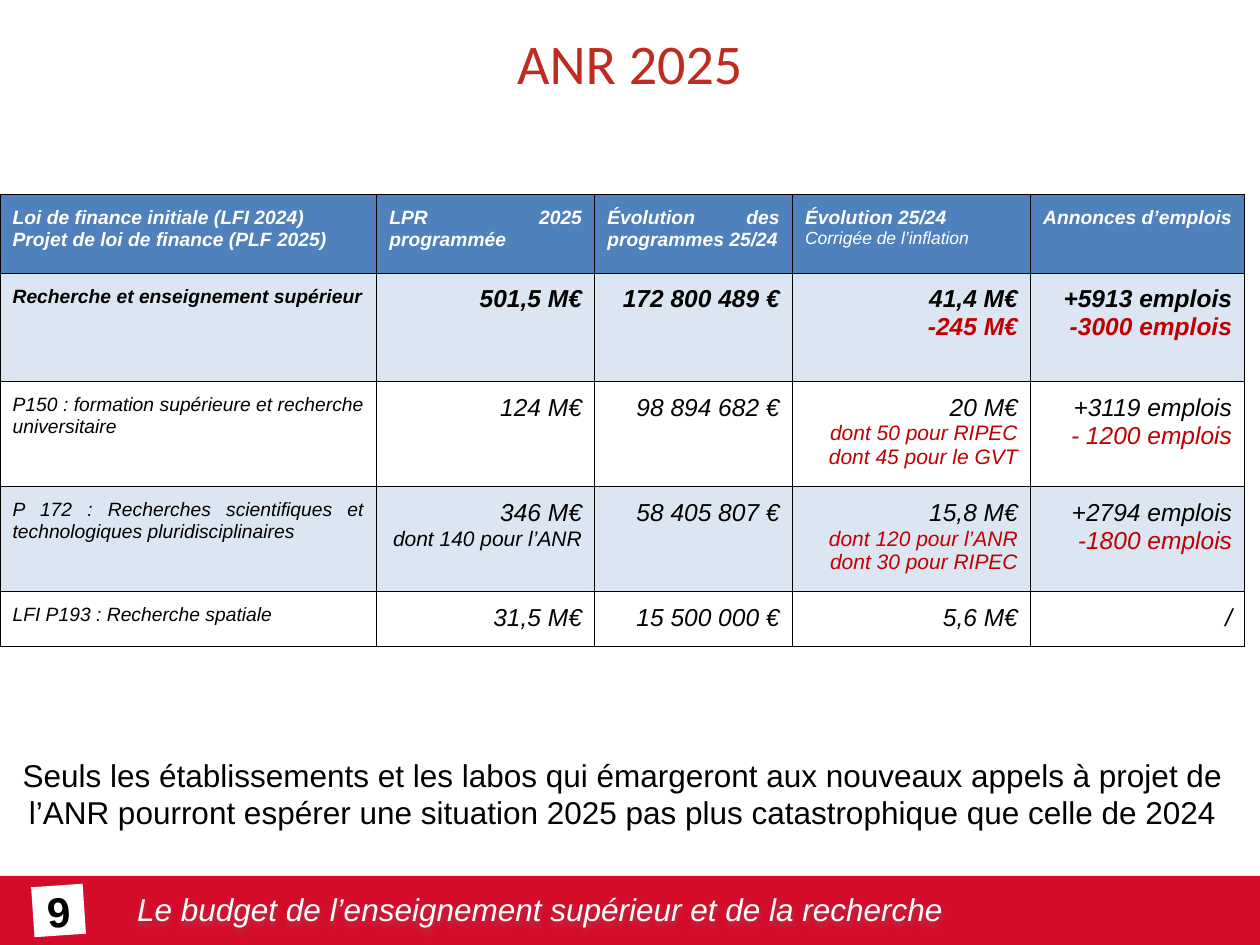
"""Build the ANR 2025 budget slide."""
from dataclasses import dataclass

from lxml import etree
from pptx import Presentation
from pptx.dml.color import RGBColor
from pptx.enum.shapes import MSO_SHAPE
from pptx.enum.text import MSO_ANCHOR, PP_ALIGN
from pptx.oxml.ns import qn
from pptx.util import Inches, Pt

RECT = MSO_SHAPE.RECTANGLE
LEFT, MID, RIGHT, JUST = PP_ALIGN.LEFT, PP_ALIGN.CENTER, PP_ALIGN.RIGHT, PP_ALIGN.JUSTIFY
TOP, CORE = MSO_ANCHOR.TOP, MSO_ANCHOR.MIDDLE
BLACK = RGBColor(0x00, 0x00, 0x00)
WHITE = RGBColor(0xFF, 0xFF, 0xFF)
RED = RGBColor(0xC0, 0x00, 0x00)
BRICK = RGBColor(0xC0, 0x2B, 0x20)
BAND = RGBColor(0xD4, 0x0C, 0x2A)
BLUE = RGBColor(0x4F, 0x81, 0xBD)
PALE = RGBColor(0xDC, 0xE6, 0xF2)
WIDE, HIGH = Inches(10), Inches(7.5)


@dataclass(frozen=True)
class Line:
    """One paragraph of one run."""
    text: str
    size: float = 14
    color: RGBColor = BLACK
    bold: bool = False
    slant: bool = True
    face: str = "Arial"


@dataclass(frozen=True)
class Row:
    """One table row, its height a share of the slide."""
    high: float
    fill: RGBColor | None
    cells: tuple[tuple[Line, ...], ...]
    heading: bool = False


@dataclass(frozen=True)
class Box:
    """A frame in shares of the slide."""
    x: float
    y: float
    w: float
    h: float

    def frame(self) -> tuple[int, int, int, int]:
        """Give the frame in slide units."""
        return (int(self.x * WIDE), int(self.y * HIGH),
                int(self.w * WIDE), int(self.h * HIGH))


def head(text: str, size: float = 11, bold: bool = True) -> Line:
    """Make a header line."""
    return Line(text, size, WHITE, bold)


def label(text: str, bold: bool = False) -> Line:
    """Make a row label."""
    return Line(text, 11, bold=bold)


def total(text: str, color: RGBColor = BLACK) -> Line:
    """Make a bold figure."""
    return Line(text, 14, color, True)


def loss(text: str) -> Line:
    """Make a red figure."""
    return Line(text, 14, RED)


def note(text: str, color: RGBColor = RED) -> Line:
    """Make a small remark."""
    return Line(text, 12, color)


COLS = (0.299, 0.173, 0.157, 0.189, 0.17)
ROWS = (
    Row(0.083, BLUE, (
        (head("Loi de finance initiale (LFI 2024)"),
         head("Projet de loi de finance (PLF 2025)")),
        (head("LPR 2025 programmée"),),
        (head("Évolution des programmes 25/24"),),
        (head("Évolution 25/24"), head("Corrigée de l’inflation", 10, False)),
        (head("Annonces d’emplois"),)), True),
    Row(0.115, PALE, (
        (label("Recherche et enseignement supérieur", True),),
        (total("501,5 M€"),),
        (total("172 800 489 €"),),
        (total("41,4 M€"), total("-245 M€", RED)),
        (total("+5913 emplois"), total("-3000 emplois", RED)))),
    Row(0.105, WHITE, (
        (label("P150 : formation supérieure et recherche universitaire"),),
        (Line("124 M€"),),
        (Line("98 894 682 €"),),
        (Line("20 M€"), note("dont 50 pour RIPEC"), note("dont 45 pour le GVT")),
        (Line("+3119 emplois"), loss("- 1200 emplois")))),
    Row(0.105, PALE, (
        (label("P 172 : Recherches scientifiques et technologiques pluridisciplinaires"),),
        (Line("346 M€"), note("dont 140 pour l’ANR", BLACK)),
        (Line("58 405 807 €"),),
        (Line("15,8 M€"), note("dont 120 pour l’ANR"), note("dont 30 pour RIPEC")),
        (Line("+2794 emplois"), loss("-1800 emplois")))),
    Row(0.057, None, (
        (label("LFI P193 : Recherche spatiale"),),
        (Line("31,5 M€"),),
        (Line("15 500 000 €"),),
        (Line("5,6 M€"),),
        (Line("/"),))),
)


def write(frame, lines: tuple[Line, ...], align: PP_ALIGN) -> None:
    """Fill a text frame with lines."""
    for at, line in enumerate(lines):
        para = frame.add_paragraph() if at else frame.paragraphs[0]
        para.alignment = align
        run = para.add_run()
        run.text = line.text
        font = run.font
        font.name, font.size = line.face, Pt(line.size)
        font.bold, font.italic = line.bold, line.slant
        font.color.rgb = line.color


def text(slide, box: Box, line: Line, align: PP_ALIGN, anchor: MSO_ANCHOR = TOP):
    """Add a wrapped text box."""
    shape = slide.shapes.add_textbox(*box.frame())
    shape.text_frame.word_wrap = True
    shape.text_frame.vertical_anchor = anchor
    write(shape.text_frame, (line,), align)
    return shape


def block(slide, box: Box, fill: RGBColor):
    """Add a plain rectangle."""
    shape = slide.shapes.add_shape(RECT, *box.frame())
    shape.shadow.inherit = False
    shape.fill.solid()
    shape.fill.fore_color.rgb = fill
    shape.line.fill.background()
    return shape


def shade(shape) -> None:
    """Give a shape a soft grey shadow below."""
    shape.shadow.inherit = False
    glow = shape.element.spPr.find(qn("a:effectLst"))
    drop = etree.SubElement(glow, qn("a:outerShdw"), blurRad=str(Pt(3.1)),
                            dist=str(Pt(1.8)), dir="5400000", rotWithShape="0")
    tint = etree.SubElement(drop, qn("a:srgbClr"), val="808080")
    etree.SubElement(tint, qn("a:alpha"), val="35000")


def edge(cell) -> None:
    """Draw the four borders of a cell."""
    props = cell._tc.get_or_add_tcPr()
    for side in ("a:lnL", "a:lnR", "a:lnT", "a:lnB"):
        rule = etree.SubElement(props, qn(side), w=str(Pt(0.75)))
        ink = etree.SubElement(rule, qn("a:solidFill"))
        etree.SubElement(ink, qn("a:srgbClr"), val=str(BLACK))


def grid(slide, x: float, y: float) -> None:
    """Add the budget table."""
    box = Box(x, y, sum(COLS), sum(row.high for row in ROWS))
    table = slide.shapes.add_table(len(ROWS), len(COLS), *box.frame()).table
    table.first_row = table.horz_banding = False
    for col, share in zip(table.columns, COLS):
        col.width = int(share * WIDE)
    for down, row in enumerate(ROWS):
        table.rows[down].height = int(row.high * HIGH)
        for over, lines in enumerate(row.cells):
            cell = table.cell(down, over)
            cell.margin_left = cell.margin_right = Inches(0.1)
            cell.margin_top = cell.margin_bottom = Inches(0.1)
            edge(cell)
            if row.fill is None:
                cell.fill.background()
            else:
                cell.fill.solid()
                cell.fill.fore_color.rgb = row.fill
            write(cell.text_frame, lines, JUST if row.heading or not over else RIGHT)


def main() -> None:
    """Build and save the slide."""
    deck = Presentation()
    deck.slide_width, deck.slide_height = WIDE, HIGH
    slide = deck.slides.add_slide(deck.slide_layouts[6])
    shade(block(slide, Box(0, 0.927, 1, 0.073), BAND))
    shade(text(slide, Box(0.099, 0.935, 0.728, 0.053),
               Line("Le budget de l’enseignement supérieur et de la recherche", 18, WHITE), LEFT))
    text(slide, Box(0, 0, 1, 0.131),
         Line("ANR 2025", 32, BRICK, slant=False, face="Calibri"), MID, CORE)
    badge = block(slide, Box(0.026, 0.937, 0.041, 0.053), WHITE)
    badge.rotation = 356.1
    frame = badge.text_frame
    frame.margin_left = frame.margin_right = frame.margin_top = frame.margin_bottom = 0
    frame.word_wrap, frame.vertical_anchor = False, CORE
    write(frame, (Line("9", 24, bold=True, slant=False),), MID)
    grid(slide, 0, 0.206)
    text(slide, Box(0, 0.793, 0.988, 0.095),
         Line("Seuls les établissements et les labos qui émargeront aux nouveaux appels à "
              "projet de l’ANR pourront espérer une situation 2025 pas plus catastrophique "
              "que celle de 2024", 18, slant=False), MID)
    deck.save("out.pptx")


if __name__ == "__main__":
    main()
